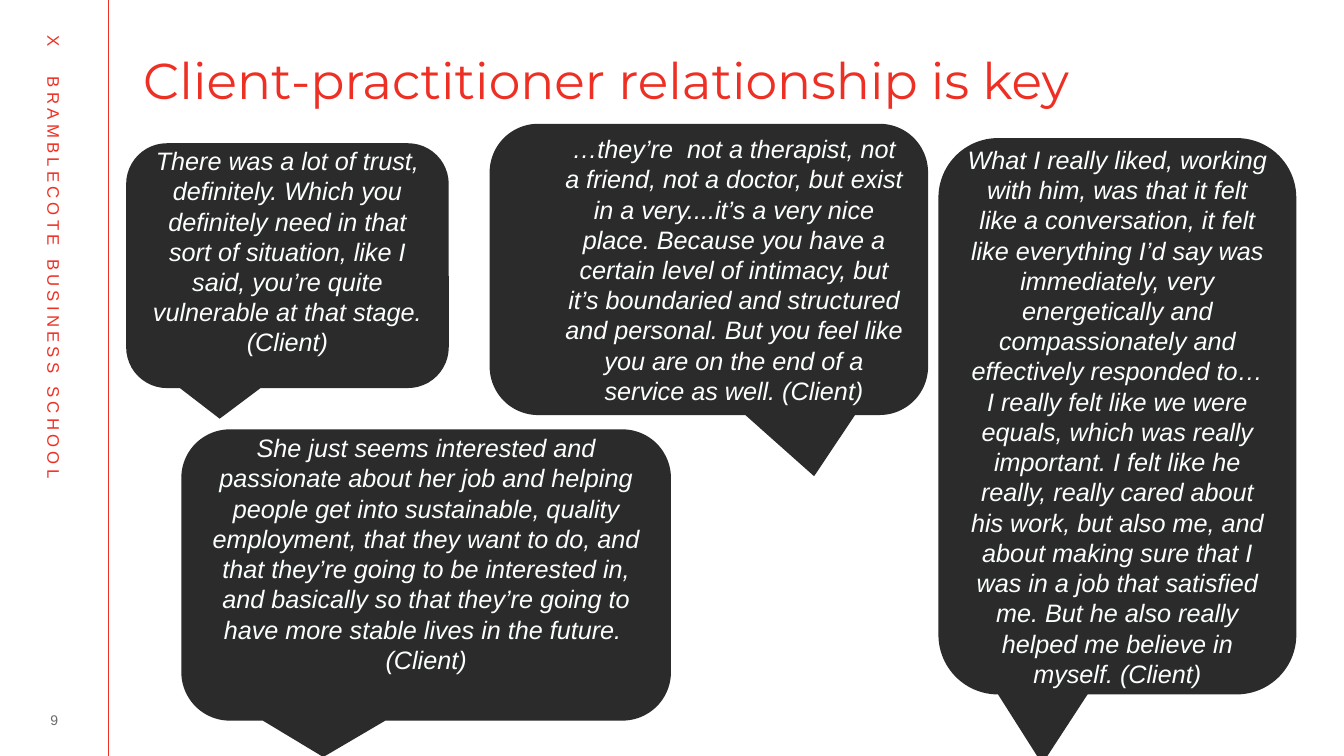
from lxml import etree
from pptx import Presentation
from pptx import util as u
from pptx.dml.color import RGBColor
from pptx.enum import shapes, text
from pptx.oxml.ns import qn

COLOURS = {
    "rule": "EE3024",
    "title": "ED2F24",
    "bubble": "2B2B2B",
    "quote": "FCFFFF",
    "number": "6B6B6B",
}
SLIDE_WIDTH, SLIDE_HEIGHT = 33.87, 19.05

# Box, bottom inset, left indent and tail position (all in cm but the tail), then wording
QUOTES = [
    ((4.57, 10.82, 12.34, 7.34), 1.22, 0, (-0.21, 0.625),
     "She just seems interested and passionate about her job and helping people get into "
     "sustainable, quality employment, that they want to do, and that they’re going to be "
     "interested in, and basically so that they’re going to have more stable lives in the "
     "future.  (Client)"),
    ((3.18, 3.61, 8.13, 6.17), 0.86, 0, (-0.21, 0.625),
     "There was a lot of trust, definitely. Which you definitely need in that sort of "
     "situation, like I said, you’re quite vulnerable at that stage. (Client)"),
    ((23.65, 3.48, 9.02, 14.02), 0.13, 0, (-0.21, 0.625),
     "What I really liked, working with him, was that it felt like a conversation, it felt "
     "like everything I’d say was immediately, very energetically and compassionately and "
     "effectively responded to… I really felt like we were equals, which was really "
     "important. I felt like he really, really cared about his work, but also me, and about "
     "making sure that I was in a job that satisfied me. But he also really helped me "
     "believe in myself. (Client)"),
    ((12.34, 3.12, 11.05, 7.34), 0.13, 1.27, (0.24, 0.71),
     "…they’re  not a therapist, not a friend, not a doctor, but exist in a very....it’s a "
     "very nice place. Because you have a certain level of intimacy, but it’s boundaried "
     "and structured and personal. But you feel like you are on the end of a service as "
     "well. (Client)"),
]


def colour(name):
    return RGBColor.from_string(COLOURS[name])


def lengths(box):
    return [u.Cm(value) for value in box]


def add_run(paragraph, wording, size, colour_name, font="Arial", italic=False):
    run = paragraph.add_run()
    run.text = wording
    run.font.size = u.Pt(size)
    run.font.name = font
    run.font.italic = italic
    run.font.color.rgb = colour(colour_name)
    return run


def set_insets(frame, left, top, right, bottom):
    frame.margin_left, frame.margin_top = u.Cm(left), u.Cm(top)
    frame.margin_right, frame.margin_bottom = u.Cm(right), u.Cm(bottom)


def add_sidebar(slide, box):
    left, top, width, height = box
    # Red rule on the right edge
    edge = u.Cm(left + width)
    rule = slide.shapes.add_connector(
        shapes.MSO_CONNECTOR.STRAIGHT, edge, u.Cm(top), edge, u.Cm(top + height))
    rule.line.color.rgb = colour("rule")
    rule.line.width = u.Pt(0.5)
    etree.SubElement(rule._element.spPr, qn("a:effectLst"))

    # School name, turned to read downwards
    length, depth = 14.4, 0.76
    centre_x, centre_y = left + 1.36, top + 7.85
    school = slide.shapes.add_textbox(*lengths(
        (centre_x - length / 2, centre_y - depth / 2, length, depth)))
    school.rotation = 90
    school.text_frame.word_wrap = True
    paragraph = school.text_frame.paragraphs[0]
    tabs = etree.SubElement(paragraph._p.get_or_add_pPr(), qn("a:tabLst"))
    etree.SubElement(tabs, qn("a:tab"), pos=str(u.Cm(1.04)), algn="l")
    run = add_run(paragraph, "X\tBRAMBLECOTE BUSINESS SCHOOL", 12, "rule")
    run._r.get_or_add_rPr().set("spc", "300")

    # Slide number
    number = slide.shapes.add_textbox(*lengths((left + 0.66, top + height - 1.22, 1.42, 0.64)))
    frame = number.text_frame
    frame.word_wrap = True
    frame.vertical_anchor = text.MSO_ANCHOR.MIDDLE
    set_insets(frame, 0, 0, 0, 0)
    frame.paragraphs[0].alignment = text.PP_ALIGN.CENTER
    add_run(frame.paragraphs[0], "9", 10, "number")


def format_title(slide, box):
    title = slide.shapes.title
    title.left, title.top, title.width, title.height = lengths(box)
    frame = title.text_frame
    frame.word_wrap = True
    frame.auto_size = text.MSO_AUTO_SIZE.NONE
    frame.vertical_anchor = text.MSO_ANCHOR.TOP
    set_insets(frame, 0, 0.53, 0, 0)
    paragraph = frame.paragraphs[0]
    paragraph.alignment = text.PP_ALIGN.LEFT
    paragraph.line_spacing = 0.8
    add_run(paragraph, "Client-practitioner relationship is key", 36, "title", "Montserrat")


def add_quote(slide, box, bottom_inset, indent, tail, wording):
    bubble = slide.shapes.add_shape(
        shapes.MSO_SHAPE.ROUNDED_RECTANGULAR_CALLOUT, *lengths(box))
    bubble.shadow.inherit = False
    bubble.adjustments[0], bubble.adjustments[1] = tail
    bubble.fill.solid()
    bubble.fill.fore_color.rgb = colour("bubble")
    bubble.line.fill.background()
    frame = bubble.text_frame
    frame.word_wrap = True
    frame.vertical_anchor = text.MSO_ANCHOR.MIDDLE
    set_insets(frame, 0.25, 0.13, 0.25, bottom_inset)
    paragraph = frame.paragraphs[0]
    paragraph.alignment = text.PP_ALIGN.CENTER
    paragraph._p.get_or_add_pPr().set("marL", str(u.Cm(indent)))
    add_run(paragraph, wording, 18, "quote", italic=True)


def main():
    presentation = Presentation()
    presentation.slide_width = u.Cm(SLIDE_WIDTH)
    presentation.slide_height = u.Cm(SLIDE_HEIGHT)
    slide = presentation.slides.add_slide(presentation.slide_layouts.get_by_name("Title Only"))
    add_sidebar(slide, (0, 0, 2.74, SLIDE_HEIGHT))
    format_title(slide, (3.61, 0.99, 28.8, 3.05))
    for quote in QUOTES:
        add_quote(slide, *quote)
    presentation.save("out.pptx")


if __name__ == "__main__":
    main()
